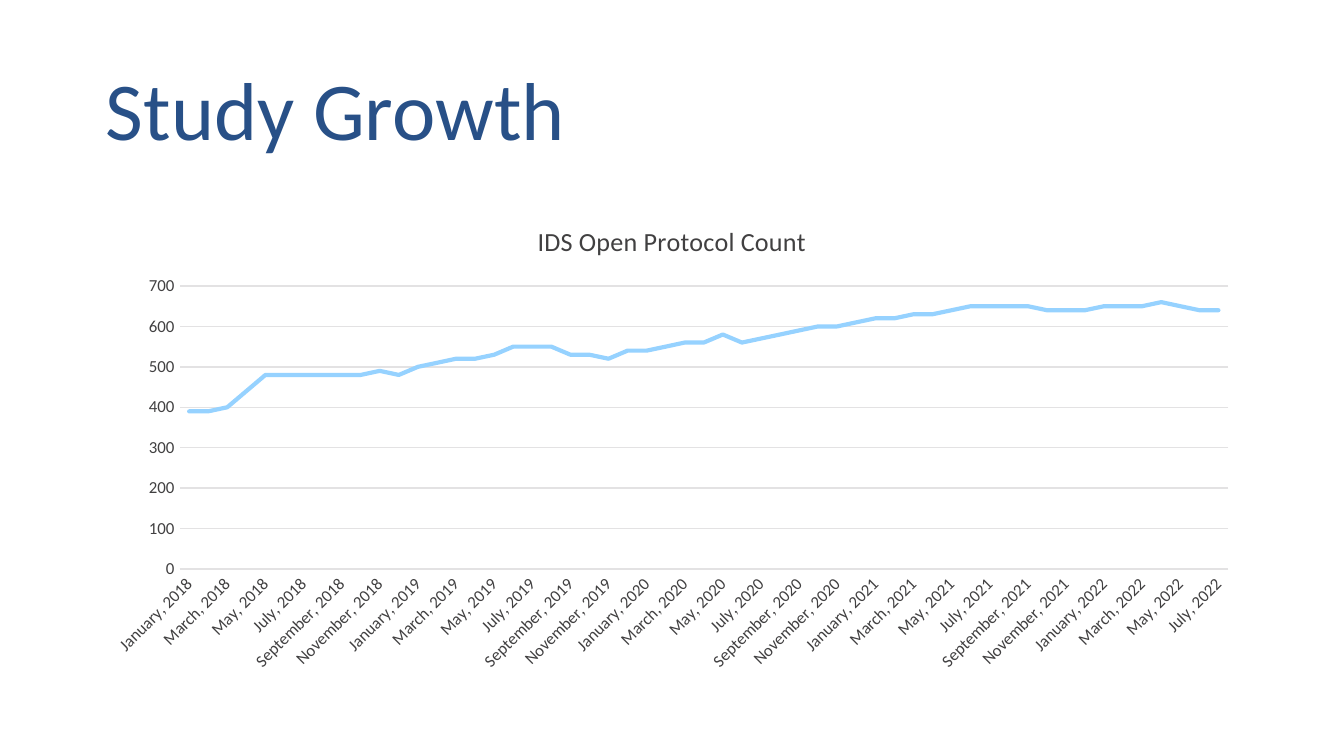
from itertools import product

from lxml import etree
from pptx import Presentation
from pptx import util as u
from pptx.chart.data import CategoryChartData
from pptx.dml.color import RGBColor
from pptx.enum import chart as ch, text
from pptx.oxml.ns import qn

HEADING = "Study Growth"
CHART_TITLE = "IDS Open Protocol Count"
YEARS = range(2018, 2023)
MONTHS = ["January", "February", "March", "April", "May", "June", "July",
          "August", "September", "October", "November", "December"]
COUNTS = [
    390, 390, 400, 440, 480, 480, 480, 480, 480, 480, 490, 480,
    500, 510, 520, 520, 530, 550, 550, 550, 530, 530, 520, 540,
    540, 550, 560, 560, 580, 560, 570, 580, 590, 600, 600, 610,
    620, 620, 630, 630, 640, 650, 650, 650, 650, 640, 640, 640,
    650, 650, 650, 660, 650, 640, 640,
]

THEME = {
    "font": "Calibri",
    "heading": "285087", "ink": "414041", "grid": "E3E2E3", "series": "96D2FF",
    "heading_size": 44, "title_size": 14, "chart_size": 10, "axis_size": 9,
    "grid_width": 0.75, "series_width": 2.25,
}
SLIDE_W = 10
SLIDE_H = SLIDE_W * 9 / 16
MARGIN = 0.69
HEADING_TOP, HEADING_H = 0.3, 1.09
CHART_TOP, CHART_H = 1.5, 3.57
PLOT_SHARES = {"x": 0.075, "y": 0.176, "w": 0.905, "h": 0.59}
TITLE_SHARES = {"x": 0.38, "y": 0.036}


def apply(target, values):
    for name, value in values.items():
        setattr(target, name, value)


def style_font(font, size, color):
    apply(font, {"name": THEME["font"], "size": u.Pt(THEME[size]), "bold": False})
    font.color.rgb = RGBColor.from_string(THEME[color])


def style_line(line, color, width):
    line.color.rgb = RGBColor.from_string(THEME[color])
    line.width = u.Pt(THEME[width])


def place(parent, shares, inner=False):
    for old in parent.findall(qn("c:layout")):
        parent.remove(old)
    layout = etree.Element(qn("c:layout"))
    manual = etree.SubElement(layout, qn("c:manualLayout"))
    settings = {"layoutTarget": "inner"} if inner else {}
    settings.update(xMode="edge", yMode="edge", **shares)
    for name, value in settings.items():
        etree.SubElement(manual, qn(f"c:{name}")).set("val", str(value))
    tx = parent.find(qn("c:tx"))
    parent.insert(0 if tx is None else parent.index(tx) + 1, layout)


def add_heading(slide, width):
    heading = slide.shapes.add_textbox(
        *map(u.Inches, (MARGIN, HEADING_TOP, width, HEADING_H)))
    frame = heading.text_frame
    apply(frame, {"word_wrap": True, "vertical_anchor": text.MSO_ANCHOR.MIDDLE})
    line = frame.paragraphs[0]
    line.line_spacing = 0.9
    run = line.add_run()
    run.text = HEADING
    style_font(run.font, "heading_size", "heading")


def add_growth_chart(slide, width):
    data = CategoryChartData()
    months = [f"{month}, {year}" for year, month in product(YEARS, MONTHS)]
    data.categories = months[:len(COUNTS)]
    data.add_series("Series 1", COUNTS)
    growth = slide.shapes.add_chart(
        ch.XL_CHART_TYPE.LINE,
        *map(u.Inches, (MARGIN, CHART_TOP, width, CHART_H)), data).chart
    apply(growth, {"has_legend": False, "has_title": True})
    style_font(growth.font, "chart_size", "ink")

    run = growth.chart_title.text_frame.paragraphs[0].add_run()
    run.text = CHART_TITLE
    style_font(run.font, "title_size", "ink")
    growth.chart_title.include_in_layout = False
    place(growth.chart_title._element, TITLE_SHARES)
    place(growth.plots[0]._element.getparent(), PLOT_SHARES, inner=True)

    month_axis, count_axis = growth.category_axis, growth.value_axis
    for axis in (month_axis, count_axis):
        apply(axis, {"major_tick_mark": ch.XL_TICK_MARK.NONE,
                     "minor_tick_mark": ch.XL_TICK_MARK.NONE})
        style_font(axis.tick_labels.font, "axis_size", "ink")
    style_line(month_axis.format.line, "grid", "grid_width")
    month_axis._element.find(qn("c:txPr")).find(qn("a:bodyPr")).set("rot", "-2700000")
    skip = etree.Element(qn("c:tickLblSkip"))
    skip.set("val", "2")
    month_axis._element.find(qn("c:noMultiLvlLbl")).addprevious(skip)

    apply(count_axis, {"minimum_scale": 0, "maximum_scale": 700,
                       "major_unit": 100, "has_major_gridlines": True})
    count_axis.format.line.fill.background()
    style_line(count_axis.major_gridlines.format.line, "grid", "grid_width")

    growth.plots[0].vary_by_categories = False
    protocols = growth.plots[0].series[0]
    protocols.smooth = False
    protocols.marker.style = ch.XL_MARKER_STYLE.NONE
    style_line(protocols.format.line, "series", "series_width")
    protocols._element.find(qn("c:spPr")).find(qn("a:ln")).set("cap", "rnd")


def main():
    deck = Presentation()
    apply(deck, {"slide_width": u.Inches(SLIDE_W), "slide_height": u.Inches(SLIDE_H)})
    slide = deck.slides.add_slide(deck.slide_layouts[6])
    width = SLIDE_W - 2 * MARGIN
    add_heading(slide, width)
    add_growth_chart(slide, width)
    deck.save("out.pptx")


if __name__ == "__main__":
    main()
